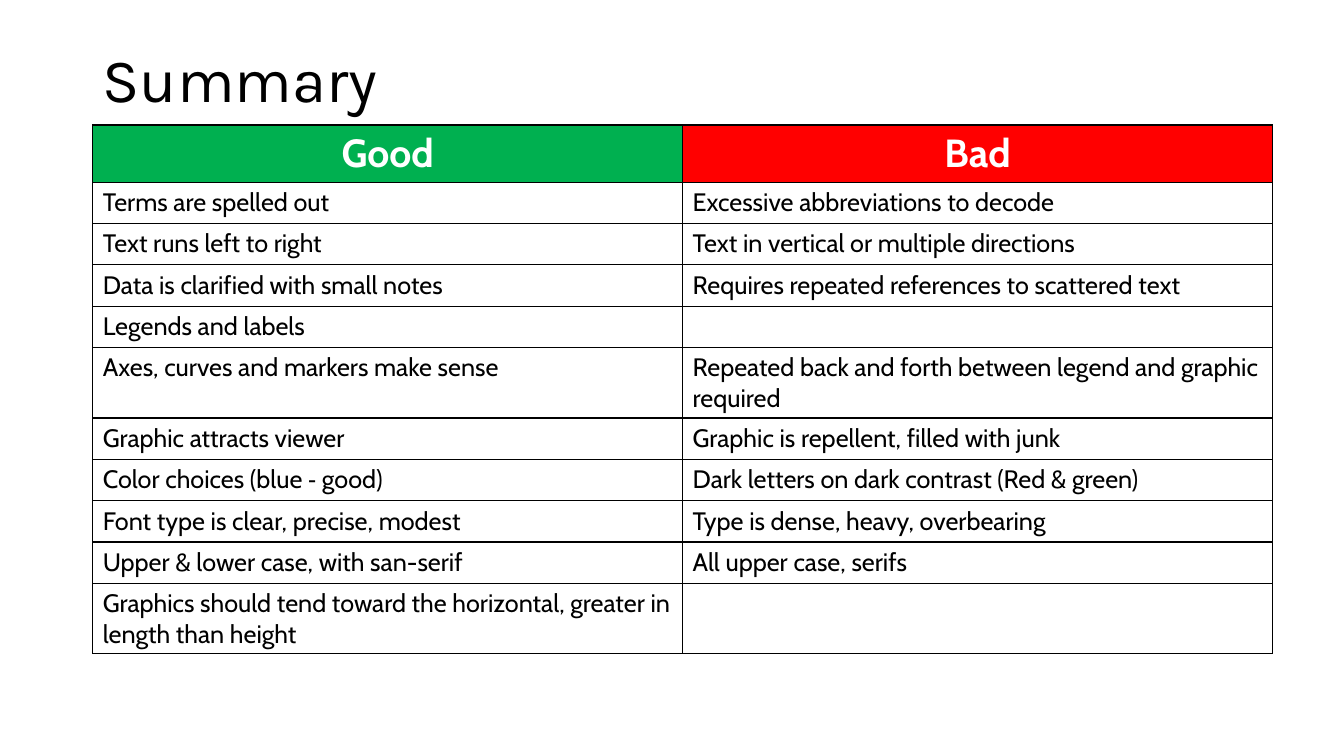
from dataclasses import dataclass

from lxml import etree
from pptx import Presentation
from pptx import util as u
from pptx.dml.color import RGBColor
from pptx.enum import text
from pptx.oxml import ns


@dataclass(frozen=True)
class Theme:
    ink: str = "000000"
    paper: str = "FFFFFF"
    good: str = "00B050"
    bad: str = "FF0000"
    title_font: str = "Karla"
    table_font: str = "Cabin"
    title_size: int = 44
    header_size: int = 28
    body_size: int = 18
    border_width: int = 1


theme = Theme()


def write(frame, words, font=theme.table_font, size=theme.body_size, color=theme.ink,
          bold=False, align=text.PP_ALIGN.LEFT, line_spacing=None):
    para = frame.paragraphs[0]
    para.alignment = align
    para.line_spacing = line_spacing
    span = para.add_run()
    span.text = words
    span.font.name = font
    span.font.size = u.Pt(size)
    span.font.bold = bold
    span.font.color.rgb = RGBColor.from_string(color)


def add_borders(cell):
    properties = cell._tc.get_or_add_tcPr()
    for side in ("a:lnL", "a:lnR", "a:lnT", "a:lnB"):
        line = etree.SubElement(properties, ns.qn(side), w=str(u.Pt(theme.border_width)))
        fill = etree.SubElement(line, ns.qn("a:solidFill"))
        etree.SubElement(fill, ns.qn("a:srgbClr"), val=theme.ink)


# Deck and page
deck = Presentation()
deck.slide_width, deck.slide_height = u.Inches(13.33), u.Inches(7.5)
page = deck.slides.add_slide(deck.slide_layouts[6])

# Title
box = page.shapes.add_textbox(u.Inches(0.92), u.Inches(0.4), u.Inches(11.5), u.Inches(0.84))
box.text_frame.word_wrap = True
box.text_frame.vertical_anchor = text.MSO_ANCHOR.MIDDLE
write(box.text_frame, "Summary", font=theme.title_font, size=theme.title_size, line_spacing=0.9)

# Comparison of good and bad graphics
headers = [("Good", theme.good), ("Bad", theme.bad)]
comparisons = [
    ("Terms are spelled out", "Excessive abbreviations to decode"),
    ("Text runs left to right", "Text in vertical or multiple directions"),
    ("Data is clarified with small notes", "Requires repeated references to scattered text"),
    ("Legends and labels", ""),
    ("Axes, curves and markers make sense",
     "Repeated back and forth between legend and graphic required"),
    ("Graphic attracts viewer", "Graphic is repellent, filled with junk"),
    ("Color choices (blue ‐ good)", "Dark letters on dark contrast (Red & green)"),
    ("Font type is clear, precise, modest", "Type is dense, heavy, overbearing"),
    ("Upper & lower case, with san-serif", "All upper case, serifs"),
    ("Graphics should tend toward the horizontal, greater in length than height", ""),
]
row_count = len(comparisons) + 1
row_height = u.Inches(0.41)
table = page.shapes.add_table(row_count, len(headers), u.Inches(0.92), u.Inches(1.24),
                              u.Inches(11.7), row_height * row_count).table
for row in table.rows:
    row.height = row_height
for cell in table.iter_cells():
    add_borders(cell)
    cell.fill.background()

# Header row
for column, (heading, color) in enumerate(headers):
    cell = table.cell(0, column)
    cell.fill.solid()
    cell.fill.fore_color.rgb = RGBColor.from_string(color)
    write(cell.text_frame, heading, size=theme.header_size, color=theme.paper,
          bold=True, align=text.PP_ALIGN.CENTER)

# Body rows
for row_number, entries in enumerate(comparisons, start=1):
    for column, entry in enumerate(entries):
        if entry:
            write(table.cell(row_number, column).text_frame, entry)

deck.save("out.pptx")
